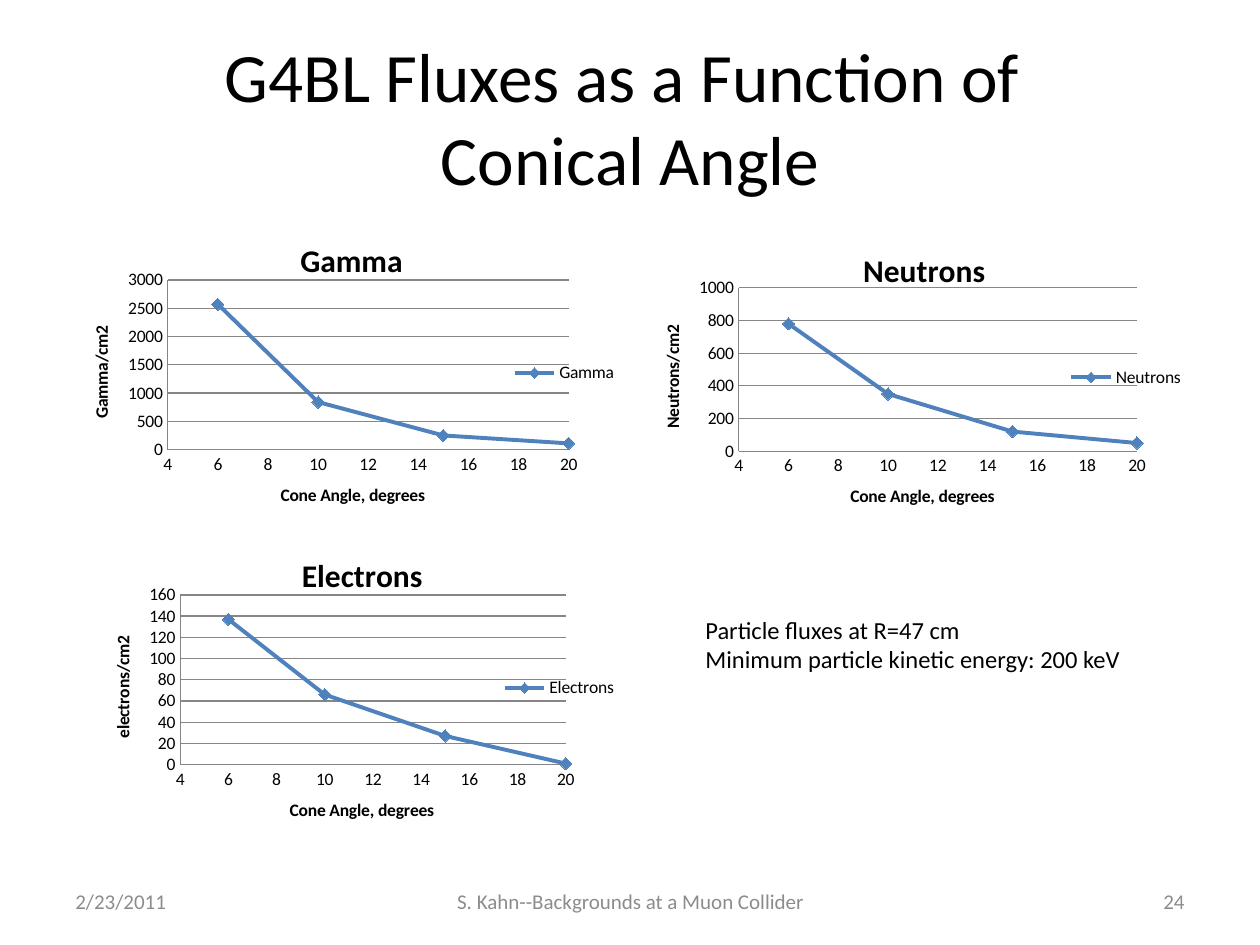
from lxml import etree
from pptx import Presentation
from pptx.chart.data import XyChartData
from pptx.dml.color import RGBColor
from pptx.enum import chart as kinds, text
from pptx.util import Inches, Pt

BLACK = RGBColor(0, 0, 0)
GRAY = RGBColor(0x8C, 0x8C, 0x8C)
GRID = RGBColor(0x86, 0x86, 0x86)
BLUE = RGBColor(0x4F, 0x81, 0xBD)
ANGLES = (6, 10, 15, 20)
LEFT, MID, RIGHT = text.PP_ALIGN.LEFT, text.PP_ALIGN.CENTER, text.PP_ALIGN.RIGHT

CHARTS = (
    ("Gamma", "Gamma/cm2", (0.58, 1.75, 4.42, 2.42), (0.17, 0.72),
     (2570, 840, 250, 110), 3000, 500),
    ("Neutrons", "Neutrons/cm2", (5.17, 1.83, 4.33, 2.33), (0.16, 0.73),
     (780, 350, 120, 50), 1000, 200),
    ("Electrons", "electrons/cm2", (0.75, 4.25, 4.25, 2.42), (0.16, 0.72),
     (137, 66, 27, 1), 160, 20),
)
NOTES = (
    ("Particle fluxes at R=47 cm\nMinimum particle kinetic energy: 200 keV",
     (5.5, 4.83, 3.67, 0.57), 14, BLACK, LEFT, text.MSO_ANCHOR.TOP),
    ("2/23/2011", (0.5, 6.95, 2.33, 0.4), 12, GRAY, LEFT, text.MSO_ANCHOR.MIDDLE),
    ("24", (7.17, 6.95, 2.33, 0.4), 12, GRAY, RIGHT, text.MSO_ANCHOR.MIDDLE),
    ("S. Kahn--Backgrounds at a Muon Collider", (3.42, 6.95, 3.17, 0.4),
     12, GRAY, MID, text.MSO_ANCHOR.MIDDLE),
)


def apply(item, values):
    for name, value in values.items():
        setattr(item, name, value)


def style(font, size, color=BLACK, bold=False):
    apply(font, {"name": "Calibri", "size": Pt(size), "bold": bold})
    font.color.rgb = color


def write(frame, words, size, color, align, anchor):
    apply(frame, {"text": words, "word_wrap": True, "vertical_anchor": anchor})
    for para in frame.paragraphs:
        para.alignment = align
        for run in para.runs:
            style(run.font, size, color)


def label(owner, words, size):
    frame = owner.text_frame
    frame.text = words
    style(frame.paragraphs[0].runs[0].font, size, bold=True)


def scale(axis, words, low, high, step):
    none = kinds.XL_TICK_MARK.NONE
    apply(axis, {"minimum_scale": low, "maximum_scale": high, "major_unit": step,
                 "major_tick_mark": none, "minor_tick_mark": none})
    label(axis.axis_title, words, 10)
    apply(axis.format.line, {"width": Pt(0.75)})
    axis.format.line.color.rgb = GRID


def place(chart, x, width):
    plot = chart.element.chart.plotArea
    space = plot.nsmap["c"]
    for old in plot.findall(f"{{{space}}}layout"):
        plot.remove(old)
    layout = etree.Element(f"{{{space}}}layout")
    manual = etree.SubElement(layout, f"{{{space}}}manualLayout")
    values = {"layoutTarget": "inner", "xMode": "edge", "yMode": "edge",
              "x": x, "y": 0.195, "w": width, "h": 0.557}
    for name, value in values.items():
        etree.SubElement(manual, f"{{{space}}}{name}", val=str(value))
    plot.insert(0, layout)


def graph(slide, name, unit, box, span, fluxes, top, step):
    data = XyChartData()
    series = data.add_series(name)
    for angle, flux in zip(ANGLES, fluxes):
        series.add_data_point(angle, flux)
    chart = slide.shapes.add_chart(
        kinds.XL_CHART_TYPE.XY_SCATTER_SMOOTH, *map(Inches, box), data).chart
    style(chart.font, 10)
    apply(chart, {"has_title": True, "has_legend": True})
    label(chart.chart_title, name, 18)
    apply(chart.legend, {"position": kinds.XL_LEGEND_POSITION.RIGHT,
                         "include_in_layout": False})
    scale(chart.category_axis, "Cone Angle, degrees", 4, 20, 2)
    scale(chart.value_axis, unit, 0, top, step)
    chart.category_axis.has_major_gridlines = False
    chart.value_axis.has_major_gridlines = True
    grid = chart.value_axis.major_gridlines.format.line
    grid.width = Pt(0.75)
    grid.color.rgb = GRID
    plot = chart.plots[0]
    plot.vary_by_categories = False
    curve = plot.series[0]
    curve.smooth = True
    curve.format.line.width = Pt(2.25)
    curve.format.line.color.rgb = BLUE
    mark = curve.marker
    apply(mark, {"style": kinds.XL_MARKER_STYLE.DIAMOND, "size": 7})
    mark.format.fill.solid()
    mark.format.fill.fore_color.rgb = BLUE
    mark.format.line.color.rgb = BLUE
    place(chart, *span)


def note(slide, words, box, *look):
    shape = slide.shapes.add_textbox(*map(Inches, box))
    write(shape.text_frame, words, *look)


def head(slide):
    title = slide.shapes.title
    box = map(Inches, (0.5, 0.3, 9, 1.25))
    apply(title, dict(zip(("left", "top", "width", "height"), box)))
    write(title.text_frame, "G4BL Fluxes as a Function of \vConical Angle",
          39.6, BLACK, MID, text.MSO_ANCHOR.MIDDLE)


def main():
    deck = Presentation()
    apply(deck, {"slide_width": Inches(10), "slide_height": Inches(7.5)})
    slide = deck.slides.add_slide(deck.slide_layouts[5])
    head(slide)
    for item in CHARTS:
        graph(slide, *item)
    for item in NOTES:
        note(slide, *item)
    deck.save("out.pptx")


if __name__ == "__main__":
    main()
